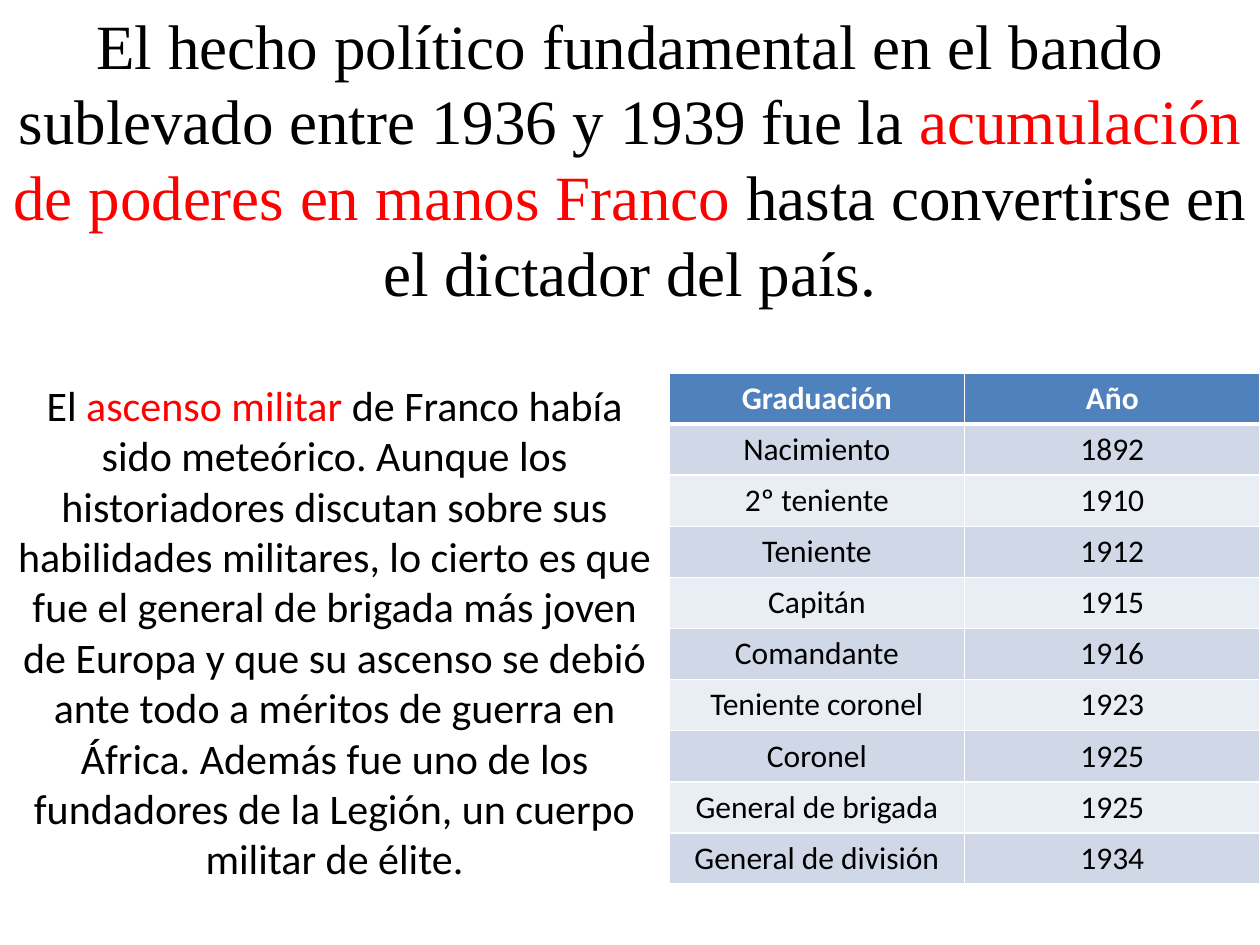
from lxml.etree import SubElement
from pptx import Presentation
from pptx.dml.color import RGBColor
from pptx.enum.text import MSO_ANCHOR as Anchor, MSO_AUTO_SIZE as AutoSize, PP_ALIGN as Align
from pptx.oxml.ns import qn
from pptx.util import Cm, Pt

BLACK, RED, WHITE = "000000", "FF0000", "FFFFFF"
HEADER_FILL, BAND_FILLS = "4F81BD", ("D0D8E8", "E9EDF4")

HEADLINE = [
    ("El hecho político fundamental en el bando sublevado entre 1936 y 1939 fue la ", BLACK),
    ("acumulación de poderes en manos Franco", RED),
    (" hasta convertirse en el dictador del país.", BLACK),
]
ASCENT = [
    ("El ", BLACK),
    ("ascenso militar ", RED),
    ("de Franco había sido meteórico. Aunque los historiadores discutan sobre sus "
     "habilidades militares, lo cierto es que fue el general de brigada más joven de "
     "Europa y que su ascenso se debió ante todo a méritos de guerra en África. Además "
     "fue uno de los fundadores de la Legión, un cuerpo militar de élite.", BLACK),
]
RANKS = [
    ("Graduación", "Año"),
    ("Nacimiento", "1892"),
    ("2º teniente", "1910"),
    ("Teniente", "1912"),
    ("Capitán", "1915"),
    ("Comandante", "1916"),
    ("Teniente coronel", "1923"),
    ("Coronel", "1925"),
    ("General de brigada", "1925"),
    ("General de división", "1934"),
]

PAGE_WIDTH, PAGE_HEIGHT = Cm(25.4), Cm(19.05)
CONTENT_TOP, TABLE_LEFT = Cm(7.52), Cm(13.49)
TABLE_HEIGHT = Cm(10.3)
HEADLINE_FONT = {"name": "Times New Roman", "size": Pt(36), "bold": False}
BODY_FONT = {"name": "Calibri", "size": Pt(24), "bold": False}
HEADER_FONT = {"name": "Calibri", "size": Pt(18), "bold": True}
CELL_FONT = {**HEADER_FONT, "bold": False}
FRAME_FORMAT = {"word_wrap": True, "auto_size": AutoSize.NONE, "vertical_anchor": Anchor.TOP}
PARA_FORMAT = {"alignment": Align.CENTER, "space_before": Pt(0), "line_spacing": 1.0}


def apply(target, values):
    for name, value in values.items():
        setattr(target, name, value)


def paint(color_format, color):
    color_format.rgb = RGBColor.from_string(color)


def write(para, spans, font):
    apply(para, PARA_FORMAT)
    for text, color in spans:
        span = para.add_run()
        span.text = text
        apply(span.font, font)
        paint(span.font.color, color)


def fill_placeholder(box, area, spans, font):
    apply(box, dict(zip(("left", "top", "width", "height"), area)))
    apply(box.text_frame, FRAME_FORMAT)
    para = box.text_frame.paragraphs[0]
    write(para, spans, font)
    return para


def remove_bullet(para):
    properties = para._p.get_or_add_pPr()
    properties.set("marL", "0")
    properties.set("indent", "0")
    SubElement(properties, qn("a:buNone"))


def add_borders(cell, widths):
    properties = cell._tc.get_or_add_tcPr()
    for side, width in widths.items():
        line = SubElement(properties, qn(f"a:ln{side}"), w=str(Pt(width)))
        SubElement(SubElement(line, qn("a:solidFill")), qn("a:srgbClr"), val=WHITE)


def add_rank_table(page):
    table = page.shapes.add_table(
        len(RANKS), len(RANKS[0]), TABLE_LEFT, CONTENT_TOP,
        PAGE_WIDTH - TABLE_LEFT, TABLE_HEIGHT).table
    for row, values in enumerate(RANKS):
        header = row == 0
        fill = HEADER_FILL if header else BAND_FILLS[(row - 1) % 2]
        font, color = (HEADER_FONT, WHITE) if header else (CELL_FONT, BLACK)
        widths = {"L": 1, "R": 1, "T": 3 if row == 1 else 1, "B": 3 if header else 1}
        for column, text in enumerate(values):
            cell = table.cell(row, column)
            write(cell.text_frame.paragraphs[0], [(text, color)], font)
            add_borders(cell, widths)
            cell.fill.solid()
            paint(cell.fill.fore_color, fill)


def main():
    deck = Presentation()
    apply(deck, {"slide_width": PAGE_WIDTH, "slide_height": PAGE_HEIGHT})
    page = deck.slides.add_slide(deck.slide_layouts[1])
    title, body = page.placeholders
    fill_placeholder(title, (0, 0, PAGE_WIDTH, Cm(6.4)), HEADLINE, HEADLINE_FONT)
    para = fill_placeholder(
        body, (0, CONTENT_TOP, TABLE_LEFT, Cm(10.52)), ASCENT, BODY_FONT)
    remove_bullet(para)
    add_rank_table(page)
    deck.save("out.pptx")


if __name__ == "__main__":
    main()
